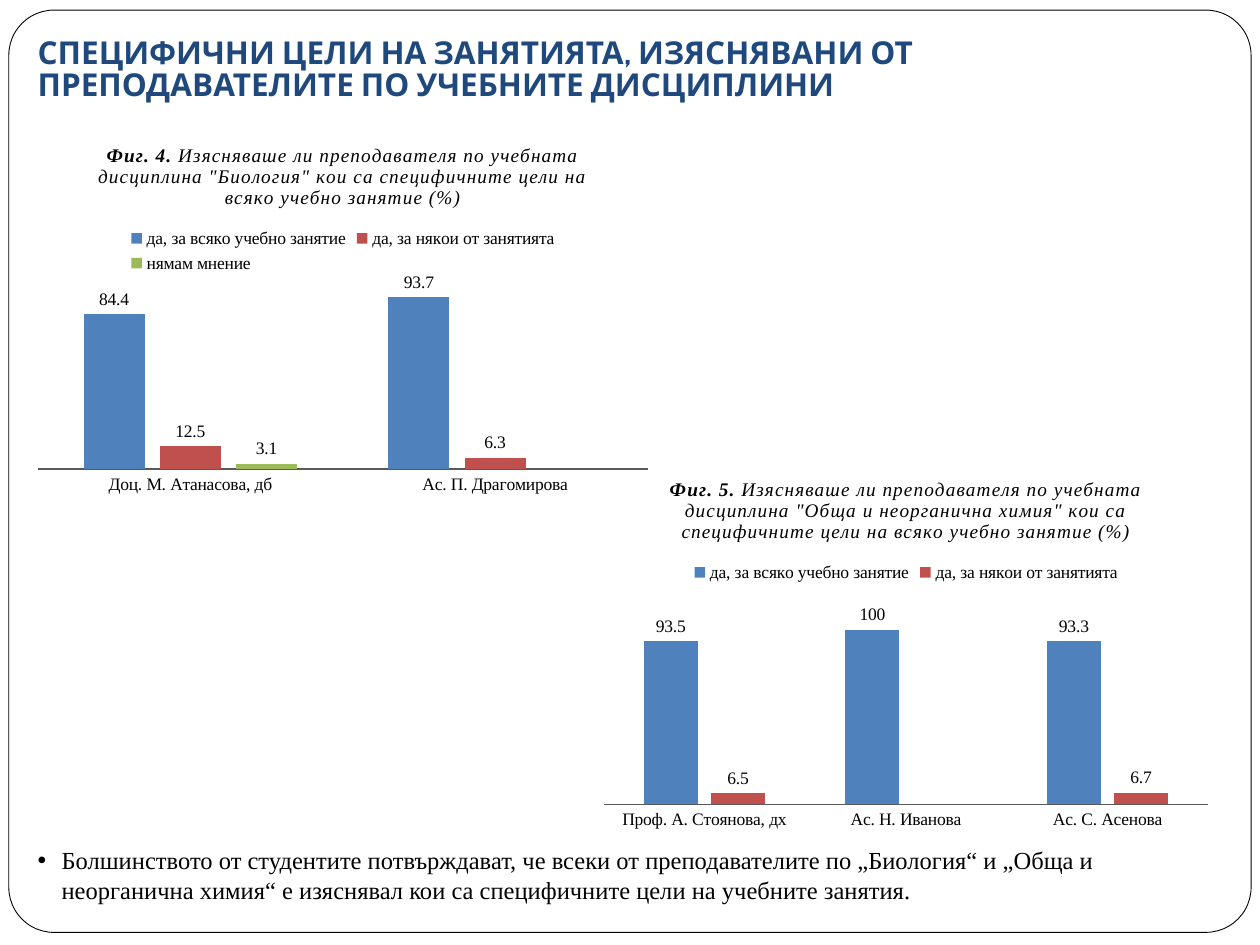
import pptx
import pptx.chart.data
import pptx.dml.color
import pptx.enum.chart
import pptx.enum.shapes
import pptx.enum.text
import pptx.util
from lxml import etree
from pptx.util import Inches

SERIF = "Times New Roman"
ANSWERS = ["да, за всяко учебно занятие", "да, за някои от занятията", "нямам мнение"]
ANSWER_COLORS = ["4F81BD", "C0504D", "9BBB59"]


def color(value):
    return pptx.dml.color.RGBColor.from_string(value)


def add_run(paragraph, text, size, font=SERIF, fill="000000", bold=False, italic=False, spacing=None):
    run = paragraph.add_run()
    run.text = text
    run.font.size = pptx.util.Pt(size)
    run.font.name = font
    run.font.color.rgb = color(fill)
    run.font.bold = bold
    run.font.italic = italic
    if spacing is not None:
        run.font._element.set("spc", str(spacing))


def add_frame(slide, box):
    frame = slide.shapes.add_shape(
        pptx.enum.shapes.MSO_SHAPE.ROUNDED_RECTANGLE, *map(Inches, box))
    frame.adjustments[0] = 0.049
    frame.shadow.inherit = False
    frame.fill.solid()
    frame.fill.fore_color.rgb = color("FFFFFF")
    frame.line.color.rgb = color("000000")
    frame.line.width = pptx.util.Pt(0.5)


def add_heading(slide, box, text):
    heading = slide.shapes.add_textbox(*map(Inches, box)).text_frame
    heading.word_wrap = True
    heading.vertical_anchor = pptx.enum.text.MSO_ANCHOR.BOTTOM
    heading.margin_bottom = Inches(0.1)
    heading.paragraphs[0].line_spacing = 0.86
    add_run(heading.paragraphs[0], text, 18, font="Cabin", fill="1F497D", bold=True)


def add_conclusion(slide, box, text):
    conclusion = slide.shapes.add_textbox(*map(Inches, box)).text_frame
    conclusion.word_wrap = True
    paragraph = conclusion.paragraphs[0]
    paragraph.space_after = pptx.util.Pt(10)
    properties = paragraph._p.get_or_add_pPr()
    properties.set("marL", str(Inches(0.19)))
    properties.set("indent", str(Inches(-0.19)))
    for tag, key, value in (("buFont", "typeface", "Arial"), ("buChar", "char", "•")):
        etree.SubElement(properties, pptx.oxml.ns.qn("a:" + tag)).set(key, value)
    add_run(paragraph, text, 14)


def add_figure(slide, box, label, question, teachers, answers, maximum, axis_width):
    data = pptx.chart.data.CategoryChartData()
    data.categories = teachers
    for answer, shares in zip(ANSWERS, answers):
        data.add_series(answer, shares)
    chart = slide.shapes.add_chart(
        pptx.enum.chart.XL_CHART_TYPE.COLUMN_CLUSTERED, *map(Inches, box), data).chart
    chart.font.name = SERIF
    chart.font.size = pptx.util.Pt(10)
    chart.font.color.rgb = color("000000")

    chart.has_title = True
    caption = chart.chart_title.text_frame.paragraphs[0]
    add_run(caption, label, 11, bold=True, italic=True, spacing=50)
    add_run(caption, " " + question, 11, italic=True, spacing=50)
    chart.chart_title.include_in_layout = False

    chart.has_legend = True
    chart.legend.position = pptx.enum.chart.XL_LEGEND_POSITION.TOP
    chart.legend.include_in_layout = False

    teacher_axis = chart.category_axis
    teacher_axis.major_tick_mark = pptx.enum.chart.XL_TICK_MARK.NONE
    teacher_axis.format.line.color.rgb = color("595959")
    teacher_axis.format.line.width = pptx.util.Pt(axis_width)
    share_axis = chart.value_axis
    share_axis.visible = False
    share_axis.has_major_gridlines = False
    share_axis.minimum_scale = 0
    share_axis.maximum_scale = maximum

    plot = chart.plots[0]
    plot.vary_by_categories = False
    plot.gap_width = 150
    plot.overlap = -25
    for series, fill in zip(plot.series, ANSWER_COLORS):
        series.format.fill.solid()
        series.format.fill.fore_color.rgb = color(fill)
        series.data_labels.show_value = True
        series.data_labels.position = pptx.enum.chart.XL_LABEL_POSITION.OUTSIDE_END


def main():
    deck = pptx.Presentation()
    deck.slide_width, deck.slide_height = Inches(10), Inches(7.5)
    slide = deck.slides.add_slide(deck.slide_layouts[6])
    add_frame(slide, (0.07, 0.08, 9.86, 7.32))
    add_heading(
        slide, (0.2, 0.21, 9.53, 0.71),
        "СПЕЦИФИЧНИ ЦЕЛИ НА ЗАНЯТИЯТА, ИЗЯСНЯВАНИ ОТ ПРЕПОДАВАТЕЛИТЕ ПО УЧЕБНИТЕ ДИСЦИПЛИНИ")
    add_conclusion(
        slide, (0.2, 6.66, 9.29, 0.63),
        "Болшинството от студентите потвърждават, че всеки от преподавателите по „Биология“ "
        "и „Обща и неорганична химия“ е изяснявал кои са специфичните цели на учебните занятия.")
    question = ('Изясняваше ли преподавателя по учебната дисциплина "{}" '
                'кои са специфичните цели на всяко учебно занятие (%)')
    add_figure(
        slide, (0.2, 0.99, 5.04, 2.99), "Фиг. 4.", question.format("Биология"),
        ["Доц. М. Атанасова, дб", "Ас. П. Драгомирова"],
        [(84.4, 93.7), (12.5, 6.3), (3.1, None)], 100, 1.25)
    add_figure(
        slide, (4.69, 3.64, 5, 3), "Фиг. 5.", question.format("Обща и неорганична химия"),
        ["Проф. А. Стоянова, дх", "Ас. Н. Иванова", "Ас. С. Асенова"],
        [(93.5, 100, 93.3), (6.5, None, 6.7)], 120, 0.75)
    deck.save("out.pptx")


if __name__ == "__main__":
    main()
